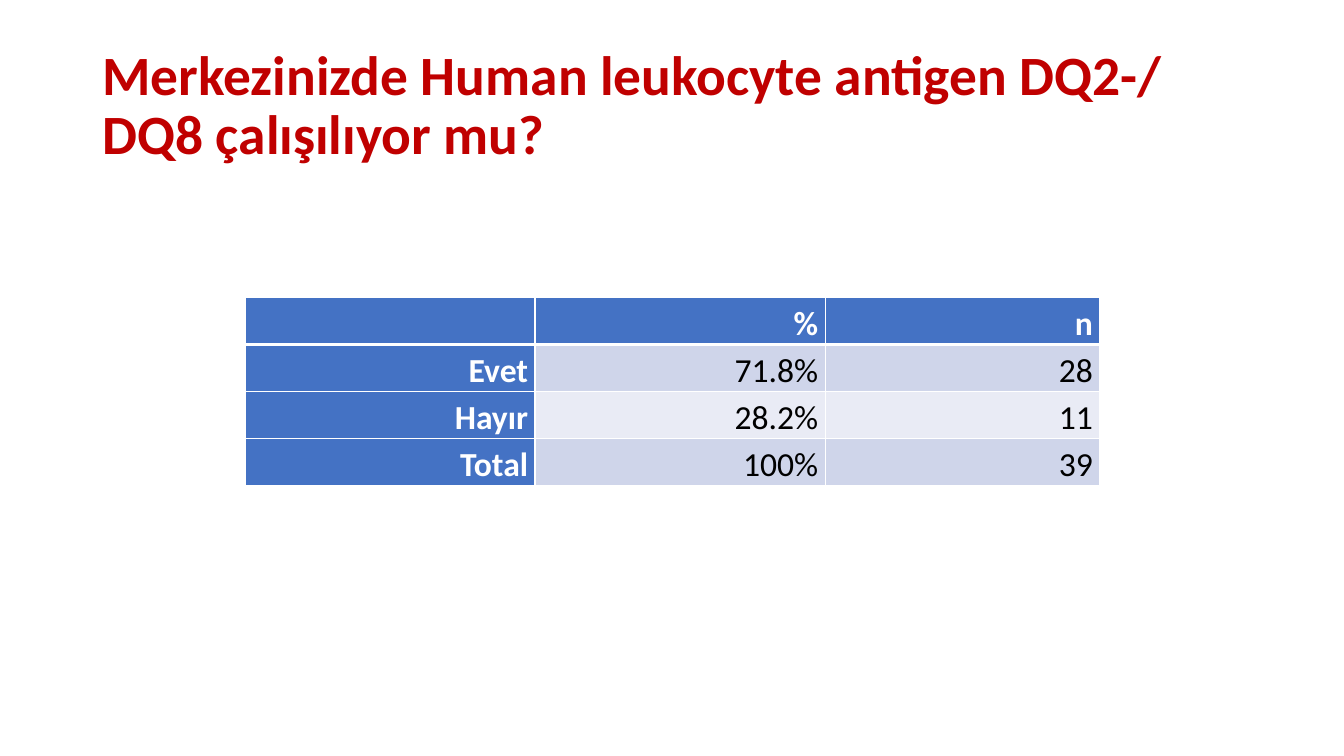
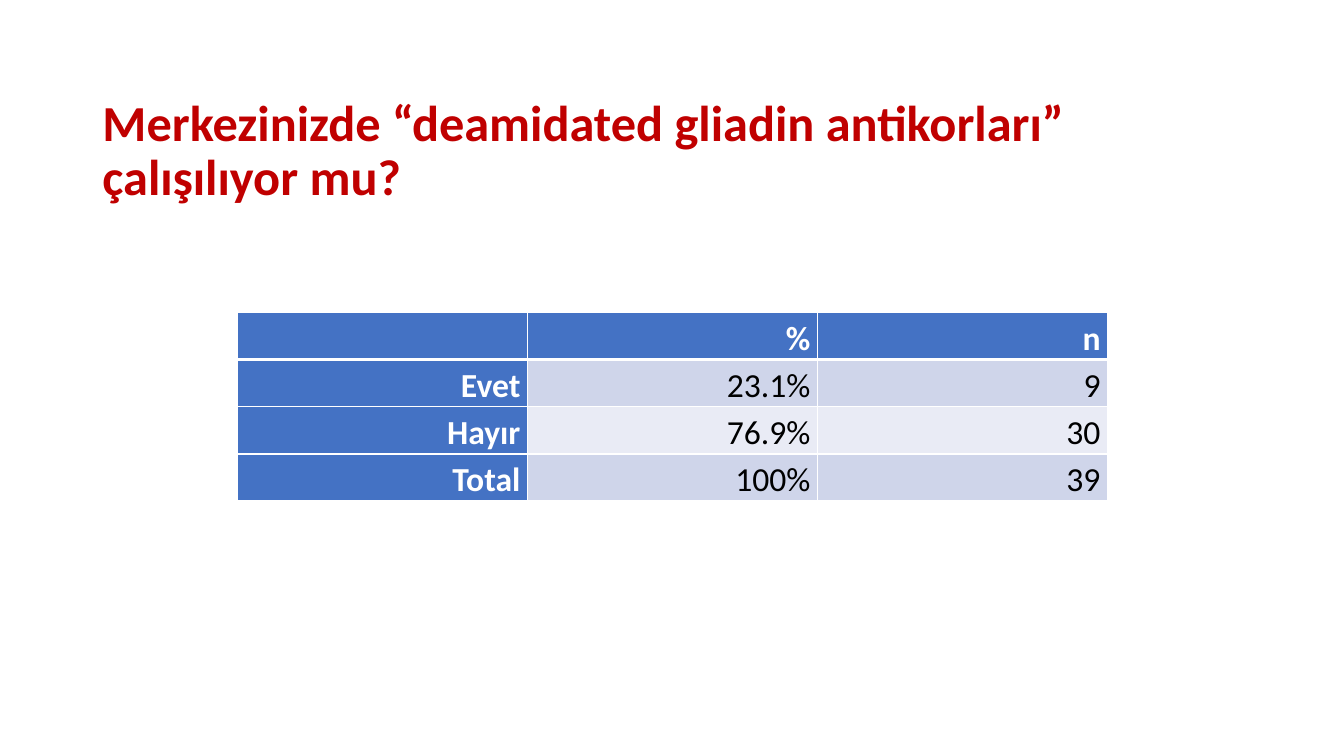
import pptx
import pptx.dml.color
import pptx.enum.text
import pptx.util
from lxml import etree

Pt = pptx.util.Pt
ALIGN = pptx.enum.text.PP_ALIGN
MIDDLE = pptx.enum.text.MSO_ANCHOR.MIDDLE
DRAWING = "{http://schemas.openxmlformats.org/drawingml/2006/main}"

FONT = "Calibri"
RED, BLUE, WHITE, BLACK = "C00000", "4472C4", "FFFFFF", "000000"
BANDS = ["CFD5EA", "E9EBF5"]
ROW_HEIGHT = 33.12
HEADER = ["", "%", "n"]

QUESTIONS = [
    {
        "title": "Merkezinizde Human leukocyte antigen DQ2-/ DQ8 çalışılıyor mu?",
        "title_top": 46, "title_size": 39.6,
        "table_left": 175, "table_top": 212.4, "widths": [207.2, 207.2, 196.2],
        "rows": [["Evet", "71.8%", "28"], ["Hayır", "28.2%", "11"], ["Total", "100%", "39"]],
    },
    {
        "title": "Merkezinizde “deamidated gliadin antikorları”\vçalışılıyor mu?",
        "title_top": 76.3, "title_size": 36,
        "table_left": 169.5, "table_top": 223.2, "widths": [207.2, 207.2, 207.2],
        "rows": [["Evet", "23.1%", "9"], ["Hayır", "76.9%", "30"], ["Total", "100%", "39"]],
    },
]


def write_text(text_frame, text, size, color, bold, align, spacing):
    paragraph = text_frame.paragraphs[0]
    paragraph.text = text
    paragraph.alignment = align
    paragraph.line_spacing = spacing
    paragraph.font.name = FONT
    paragraph.font.size = Pt(size)
    paragraph.font.bold = bold
    paragraph.font.color.rgb = pptx.dml.color.RGBColor.from_string(color)


def format_cell(cell, fill, top_width, bottom_width):
    """Give the cell white borders, a fill and tight margins."""
    properties = cell._tc.get_or_add_tcPr()
    for side, width in (("L", 1), ("R", 1), ("T", top_width), ("B", bottom_width)):
        border = etree.SubElement(properties, DRAWING + "ln" + side, w=str(Pt(width)))
        border_fill = etree.SubElement(border, DRAWING + "solidFill")
        etree.SubElement(border_fill, DRAWING + "srgbClr", val=WHITE)
    cell.fill.solid()
    cell.fill.fore_color.rgb = pptx.dml.color.RGBColor.from_string(fill)
    cell.vertical_anchor = MIDDLE
    cell.margin_left = cell.margin_right = Pt(5)
    cell.margin_top = cell.margin_bottom = Pt(0)


presentation = pptx.Presentation()
presentation.slide_width = Pt(960)
presentation.slide_height = Pt(540)
title_only = presentation.slide_layouts[5]

for question in QUESTIONS:
    slide = presentation.slides.add_slide(title_only)

    title = slide.shapes.title
    title.left, title.top = Pt(66), Pt(question["title_top"])
    title.width, title.height = Pt(828), Pt(104.4)
    title_frame = title.text_frame
    title_frame.word_wrap = True
    title_frame.auto_size = pptx.enum.text.MSO_AUTO_SIZE.NONE
    title_frame.vertical_anchor = MIDDLE
    # The bottom margin lifts the title by half a line.
    title_frame.margin_bottom = Pt(3.6 + round(question["title_size"] * 1.1, 1))
    write_text(title_frame, question["title"], size=question["title_size"],
               color=RED, bold=True, align=ALIGN.LEFT, spacing=0.9)

    rows = [HEADER] + question["rows"]
    widths = question["widths"]
    table = slide.shapes.add_table(
        len(rows), len(widths), Pt(question["table_left"]), Pt(question["table_top"]),
        Pt(sum(widths)), Pt(ROW_HEIGHT * len(rows))).table
    table.first_col = True
    for column, width in zip(table.columns, widths):
        column.width = Pt(width)

    for row_index, row in enumerate(rows):
        for column_index, text in enumerate(row):
            is_heading = row_index == 0 or column_index == 0
            cell = table.cell(row_index, column_index)
            format_cell(cell, fill=BLUE if is_heading else BANDS[(row_index - 1) % 2],
                        top_width=3 if row_index == 1 else 1,
                        bottom_width=3 if row_index == 0 else 1)
            if text:
                write_text(cell.text_frame, text, size=24,
                           color=WHITE if is_heading else BLACK, bold=is_heading,
                           align=ALIGN.RIGHT, spacing=1.15)

presentation.save("out.pptx")
